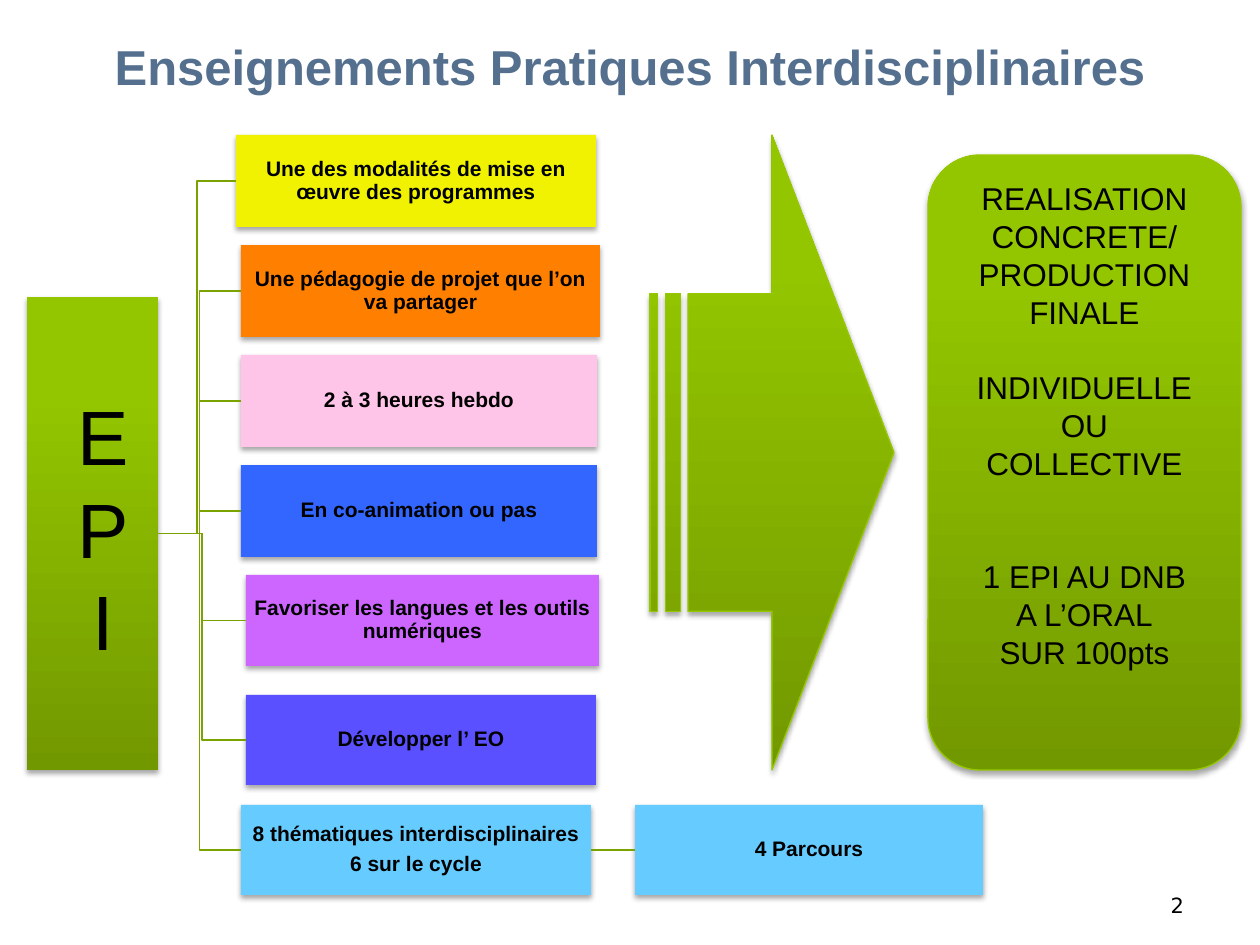
import pptx
import pptx.util
import pptx.oxml
import pptx.dml.color
import pptx.enum.shapes
import pptx.enum.text
import pptx.oxml.ns

SHAPE = pptx.enum.shapes.MSO_SHAPE
CONNECTOR = pptx.enum.shapes.MSO_CONNECTOR
ALIGN = pptx.enum.text.PP_ALIGN
ANCHOR = pptx.enum.text.MSO_ANCHOR
DRAWING = pptx.oxml.ns.nsdecls("a")
RIGHT_SIDE, LEFT_SIDE = 3, 1

COLORS = {
    "title": "54708E", "text": "000000", "link": "7BA300", "outline": "96C800",
    "yellow": "F0F201", "orange": "FF8000", "pink": "FFC5E8", "blue": "3366FF",
    "violet": "CC66FF", "indigo": "5A50FF", "sky": "66CCFF",
    "dark green": "729800", "green": "94C600", "light green": "95C700",
}
GREEN_STOPS = [(0, "dark green"), (80, "green"), (100, "light green")]

BARS = [
    (236, 360, 92, "yellow", ["Une des modalités de mise en œuvre des programmes"]),
    (241, 359, 92, "orange", ["Une pédagogie de projet que l’on va partager"]),
    (241, 356, 92, "pink", ["2 à 3 heures hebdo"]),
    (241, 356, 92, "blue", ["En co-animation ou pas"]),
    (246, 353, 91, "violet", ["Favoriser les langues et les outils numériques"]),
    (246, 350, 90, "indigo", ["Développer l’ EO"]),
    (241, 350, 90, "sky", ["8 thématiques interdisciplinaires", "6 sur le cycle"]),
]
FIRST_TOP, PITCH, EXTRA_GAP = 135, 110, 10

RESULT_GROUPS = [
    (0, ["REALISATION CONCRETE/ PRODUCTION FINALE"]),
    (1, ["INDIVIDUELLE", "OU", "COLLECTIVE"]),
    (2, ["1 EPI AU DNB", "A L’ORAL", "SUR 100pts"]),
]
RESULT_LINE = 21.6


def px(length):
    return pptx.util.Emu(round(length * 914400 / 126))


def rgb(name):
    return pptx.dml.color.RGBColor.from_string(COLORS[name])


def write(shape, lines, size, font="Arial", color="text", bold=False, align=ALIGN.CENTER,
          anchor=ANCHOR.MIDDLE, insets=(13, 6, 13, 6), spacing=None, after=None, before=None):
    frame = shape.text_frame
    frame.word_wrap = True
    frame.vertical_anchor = anchor
    frame.margin_left, frame.margin_top, frame.margin_right, frame.margin_bottom = map(px, insets)
    for index, line in enumerate(lines):
        para = frame.add_paragraph() if index else frame.paragraphs[0]
        para.alignment = align
        if spacing:
            para.line_spacing = spacing
        if after:
            para.space_after = pptx.util.Pt(after)
        if before and before.get(index):
            para.space_before = pptx.util.Pt(before[index])
        span = para.add_run()
        span.text = line
        span.font.name = font
        span.font.size = pptx.util.Pt(size)
        span.font.bold = bold
        span.font.color.rgb = rgb(color)


class Builder:
    def __init__(self, deck):
        self.page = deck.slides.add_slide(deck.slide_layouts[5])

    def title(self, text, left, top, width, height):
        box = self.page.shapes.title
        box.left, box.top, box.width, box.height = map(px, (left, top, width, height))
        write(box, [text], 28, color="title", bold=True, anchor=ANCHOR.BOTTOM)

    def label(self, lines, left, top, width, height, **style):
        box = self.page.shapes.add_textbox(*map(px, (left, top, width, height)))
        write(box, lines, **style)

    def shape(self, kind, left, top, width, height, fill=None, outline=None):
        shape = self.page.shapes.add_shape(kind, *map(px, (left, top, width, height)))
        if fill:
            shape.fill.solid()
            shape.fill.fore_color.rgb = rgb(fill)
        else:
            self.green_gradient(shape)
        if outline:
            shape.line.color.rgb = rgb(outline)
            shape.line.width = pptx.util.Pt(0.75)
        else:
            shape.line.fill.background()
        self.soft_shadow(shape)
        return shape

    def bar(self, lines, left, top, width, height, fill):
        bar = self.shape(SHAPE.RECTANGLE, left, top, width, height, fill)
        write(bar, lines, 12, bold=True, insets=(1, 1, 1, 1), spacing=0.9, after=4.2)
        return bar

    def link(self, kind, start, end):
        line = self.page.shapes.add_connector(kind, 0, 0, 0, 0)
        line.begin_connect(start, RIGHT_SIDE)
        line.end_connect(end, LEFT_SIDE)
        line.line.color.rgb = rgb("link")
        line.line.width = pptx.util.Pt(0.75)
        line._element.spPr.append(pptx.oxml.parse_xml(f"<a:effectLst {DRAWING}/>"))

    def green_gradient(self, shape):
        shape.fill.gradient()
        shape.fill.gradient_angle = 90
        stops = shape._element.spPr.find(".//" + pptx.oxml.ns.qn("a:gsLst"))
        for stop in list(stops):
            stops.remove(stop)
        for position, color in GREEN_STOPS:
            stops.append(pptx.oxml.parse_xml(
                f'<a:gs {DRAWING} pos="{position * 1000}"><a:srgbClr val="{COLORS[color]}"/></a:gs>'))

    def soft_shadow(self, shape):
        shape.shadow.inherit = False
        effects = shape._element.spPr.find(pptx.oxml.ns.qn("a:effectLst"))
        effects.append(pptx.oxml.parse_xml(
            f'<a:outerShdw {DRAWING} blurRad="{int(pptx.util.Pt(3.1))}" dist="{int(pptx.util.Pt(1.8))}"'
            ' dir="5400000" rotWithShape="0"><a:srgbClr val="000000">'
            '<a:alpha val="35000"/></a:srgbClr></a:outerShdw>'))


def main():
    deck = pptx.Presentation()
    deck.slide_width, deck.slide_height = px(1260), px(945)
    slide = Builder(deck)
    slide.title("Enseignements Pratiques Interdisciplinaires", 0, 0, 1260, 101)
    slide.label(["2"], 903, 861, 294, 63, size=12, font="DejaVu Sans",
                align=ALIGN.RIGHT, anchor=ANCHOR.BOTTOM)

    root = slide.shape(SHAPE.RECTANGLE, 27, 297, 131, 473)
    for index, (left, width, height, fill, lines) in enumerate(BARS):
        top = FIRST_TOP + PITCH * index + (EXTRA_GAP if index >= 5 else 0)
        bar = slide.bar(lines, left, top, width, height, fill)
        slide.link(CONNECTOR.ELBOW, root, bar)
    pathways = slide.bar(["4 Parcours"], 635, top, 348, height, "sky")
    slide.link(CONNECTOR.STRAIGHT, bar, pathways)
    slide.label(["E", "P", "I"], 64, 383, 79, 292, size=44, anchor=ANCHOR.TOP)

    slide.shape(SHAPE.STRIPED_RIGHT_ARROW, 650, 135, 244, 635, outline="outline")
    result = slide.shape(SHAPE.ROUNDED_RECTANGLE, 928, 155, 313, 615, outline="outline")
    lines, before = [], {}
    for blank_lines, group in RESULT_GROUPS:
        before[len(lines)] = blank_lines * RESULT_LINE
        lines += group
    write(result, lines, 18, anchor=ANCHOR.TOP, insets=(13, 9, 13, 6), before=before)
    deck.save("out.pptx")


if __name__ == "__main__":
    main()
